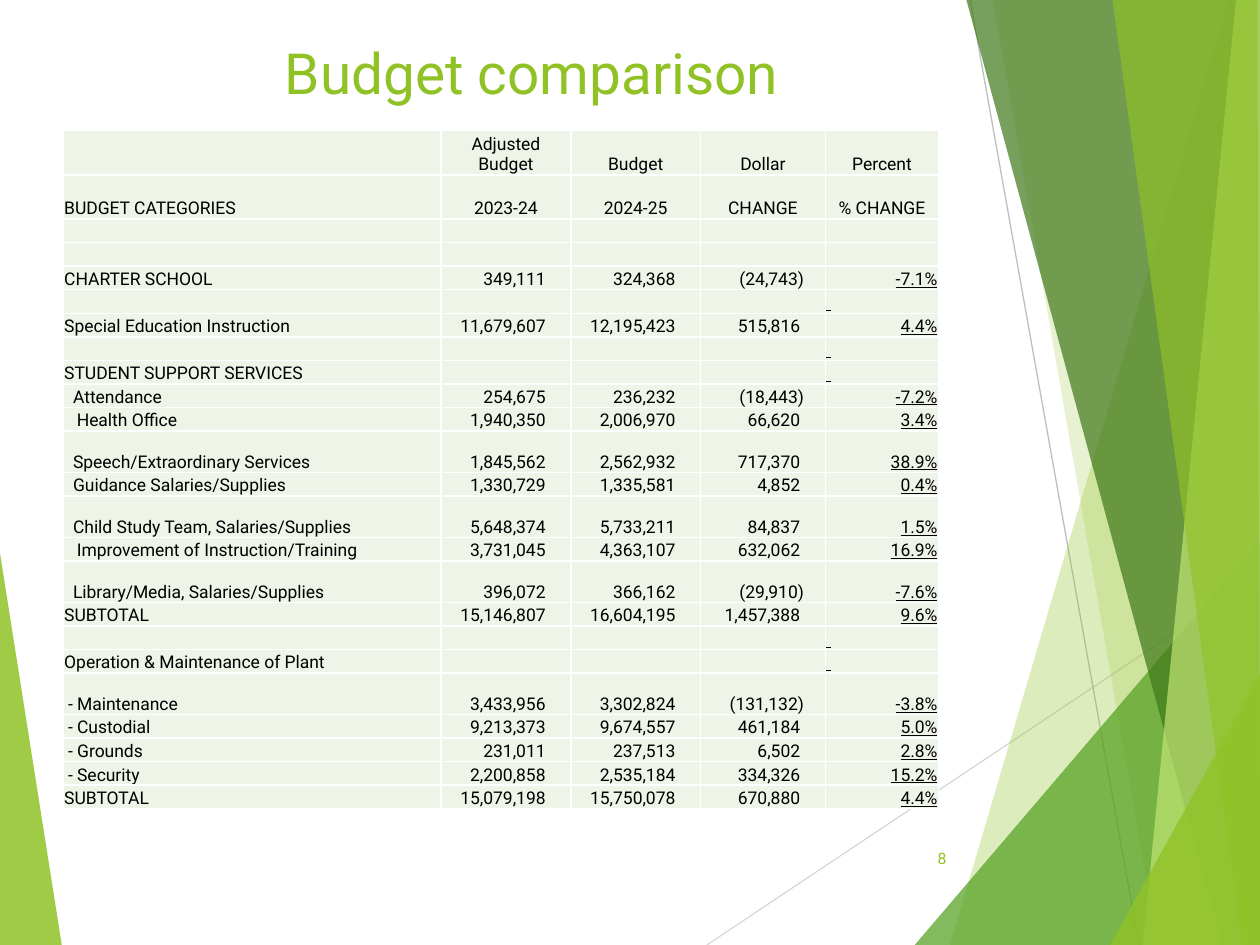
import pptx
import pptx.util
import pptx.dml.color
import pptx.enum.text
import pptx.enum.shapes
import pptx.oxml
import pptx.oxml.ns
import lxml.etree

RGB = pptx.dml.color.RGBColor
INCH = pptx.util.Inches
PT = pptx.util.Pt
ALIGN = pptx.enum.text.PP_ALIGN
ANCHOR = pptx.enum.text.MSO_ANCHOR
QN = pptx.oxml.ns.qn

LIME = RGB(0x90, 0xC2, 0x26)
GREEN = RGB(0x54, 0xA0, 0x21)
DARK = RGB(0x3F, 0x78, 0x19)
PALE = RGB(0xC0, 0xE4, 0x74)
MINT = RGB(0xEE, 0xF4, 0xE8)
BLACK = RGB(0, 0, 0)
LIGHT = RGB(0xD9, 0xD9, 0xD9)
GRAY = RGB(0xBF, 0xBF, 0xBF)
FONT = "Roboto"
WIDE, HIGH = 10, 7.5

# Background: straight lines (from, to, colour) and shards (colour, opacity, corners)
LINES = [
    ((5.61, HIGH), (WIDE, 4.57), LIGHT),
    ((7.7, 0), (9.04, HIGH), GRAY),
]
LEFT = (LIME, 85, [(0, 4.39), (0.49, HIGH), (0, HIGH)])
SHARDS = [
    (LIME, 30, [(9.75, 0), (7.54, HIGH), (WIDE, HIGH), (WIDE, 0)]),
    (LIME, 20, [(7.88, 0), (9.19, HIGH), (WIDE, HIGH), (WIDE, 0)]),
    (GREEN, 72, [(7.26, HIGH), (WIDE, 4.29), (WIDE, HIGH)]),
    (DARK, 70, [(7.67, 0), (9.7, HIGH), (WIDE, HIGH), (WIDE, 0)]),
    (PALE, 70, [(9.81, 0), (9.07, HIGH), (WIDE, HIGH), (WIDE, 0)]),
    (LIME, 65, [(8.83, 0), (9.86, HIGH), (WIDE, HIGH), (9.98, 0)]),
    (LIME, 80, [(8.81, HIGH), (WIDE, 5.35), (WIDE, HIGH)]),
]

# Table: label, two budgets, change, percent; a lone underlined space is a bare rule
HEADS = [
    ("", "Adjusted Budget", "Budget", "Dollar", "Percent"),
    ("BUDGET CATEGORIES", "2023-24", "2024-25", "CHANGE", "% CHANGE"),
]
BLANK = ("", None, None, None, "")
RULE = ("", None, None, None, " ")
ROWS = [
    BLANK,
    BLANK,
    ("CHARTER SCHOOL", 349111, 324368, -24743, "-7.1%"),
    RULE,
    ("Special Education Instruction", 11679607, 12195423, 515816, "4.4%"),
    RULE,
    ("STUDENT SUPPORT SERVICES", None, None, None, " "),
    ("Attendance", 254675, 236232, -18443, "-7.2%"),
    ("Health Office", 1940350, 2006970, 66620, "3.4%"),
    ("Speech/Extraordinary Services", 1845562, 2562932, 717370, "38.9%"),
    ("Guidance Salaries/Supplies", 1330729, 1335581, 4852, "0.4%"),
    ("Child Study Team, Salaries/Supplies", 5648374, 5733211, 84837, "1.5%"),
    ("Improvement of Instruction/Training", 3731045, 4363107, 632062, "16.9%"),
    ("Library/Media, Salaries/Supplies", 396072, 366162, -29910, "-7.6%"),
    ("SUBTOTAL", 15146807, 16604195, 1457388, "9.6%"),
    RULE,
    ("Operation & Maintenance of Plant", None, None, None, " "),
    ("- Maintenance", 3433956, 3302824, -131132, "-3.8%"),
    ("- Custodial", 9213373, 9674557, 461184, "5.0%"),
    ("- Grounds", 231011, 237513, 6502, "2.8%"),
    ("- Security", 2200858, 2535184, 334326, "15.2%"),
    ("SUBTOTAL", 15079198, 15750078, 670880, "4.4%"),
]
COLS = [3, 1.03, 1.03, 0.99, 0.9]
TALL = {0: 0.36, 1: 0.35, 11: 0.33, 13: 0.33, 15: 0.33, 19: 0.33}
DEEP = 5.39
SERVICES = range(9, 16)
FURTHER = (10, 14)  # services set in a little more than the rest


def write(frame, text, size=10, color=BLACK, align=ALIGN.LEFT, line=False):
    para = frame.paragraphs[0]
    para.alignment = align
    if not text:
        para._p.get_or_add_endParaRPr().set("sz", str(size * 100))
        return
    run = para.add_run()
    run.text = text
    run.font.name, run.font.size = FONT, PT(size)
    run.font.color.rgb, run.font.underline = color, line


def box(slide, text, place, anchor=ANCHOR.TOP, **form):
    frame = slide.shapes.add_textbox(*map(INCH, place)).text_frame
    frame.word_wrap = True
    frame.vertical_anchor = anchor
    write(frame, text, **form)


def shard(slide, color, alpha, spots):
    spots = [(INCH(x), INCH(y)) for x, y in spots]
    path = slide.shapes.build_freeform(*spots[0], scale=1.0)
    path.add_line_segments(spots[1:], close=True)
    shape = path.convert_to_shape()
    shape.shadow.inherit = False
    shape.fill.solid()
    shape.fill.fore_color.rgb = color
    shape.line.fill.background()
    tint = shape._element.spPr.find(QN("a:solidFill"))[0]
    lxml.etree.SubElement(tint, QN("a:alpha")).set("val", str(alpha * 1000))


def rule(slide, start, end, color):
    kind = pptx.enum.shapes.MSO_CONNECTOR.STRAIGHT
    line = slide.shapes.add_connector(kind, *map(INCH, start + end))
    line.line.color.rgb, line.line.width = color, PT(0.75)
    lxml.etree.SubElement(line._element.spPr, QN("a:effectLst"))


def edge(cell):
    props = cell._tc.get_or_add_tcPr()
    space = pptx.oxml.ns.nsdecls("a")
    for spot, side in enumerate(("lnL", "lnR", "lnT", "lnB")):
        props.insert(spot, pptx.oxml.parse_xml(
            f'<a:{side} {space} w="12700"><a:solidFill>'
            f'<a:srgbClr val="FFFFFF"/></a:solidFill></a:{side}>'))


def money(value):
    if value is None:
        return ""
    return f"({-value:,})" if value < 0 else f"{value:,}"


def indent(row, label):
    if label.startswith("-"):
        return 0.04
    if row in SERVICES:
        return 0.11 if row in FURTHER else 0.08
    return 0.01


def fill(cell, row, col, value):
    cell.fill.solid()
    cell.fill.fore_color.rgb = MINT
    cell.vertical_anchor = ANCHOR.BOTTOM
    left, right, align, line = 0.01, 0.01, ALIGN.LEFT, False
    if col == 0:
        left = indent(row, value)
    elif row < len(HEADS):
        align = ALIGN.CENTER
    elif col == 4:
        line = True
        align = ALIGN.RIGHT if value.strip() else ALIGN.LEFT
    else:
        align = ALIGN.RIGHT
        right = 0.17 if value and value < 0 else 0.2
        value = money(value)
    cell.margin_left, cell.margin_right = INCH(left), INCH(right)
    cell.margin_top, cell.margin_bottom = INCH(0.01), 0
    write(cell.text_frame, value, align=align, line=line)
    edge(cell)


def grid(slide):
    data = HEADS + ROWS
    area = map(INCH, (0.5, 1.03, sum(COLS), DEEP))
    table = slide.shapes.add_table(len(data), len(COLS), *area).table
    table.first_row = table.horz_banding = False
    for col, width in zip(table.columns, COLS):
        col.width = INCH(width)
    short = (DEEP - sum(TALL.values())) / (len(data) - len(TALL))
    for r, line in enumerate(data):
        table.rows[r].height = INCH(TALL.get(r, short))
        for c, value in enumerate(line):
            fill(table.cell(r, c), r, c, value)


def main():
    deck = pptx.Presentation()
    deck.slide_width, deck.slide_height = INCH(WIDE), INCH(HIGH)
    slide = deck.slides.add_slide(deck.slide_layouts[6])
    # Background
    shard(slide, *LEFT)
    for line in LINES:
        rule(slide, *line)
    for part in SHARDS:
        shard(slide, *part)
    # Title, page number and table
    box(slide, "Budget comparison", (0.75, 0.25, 6.94, 0.67),
        size=32.4, color=LIME, align=ALIGN.CENTER)
    box(slide, "8", (7.05, 6.61, 0.56, 0.4), anchor=ANCHOR.MIDDLE,
        size=9, color=LIME, align=ALIGN.RIGHT)
    grid(slide)
    deck.save("out.pptx")


if __name__ == "__main__":
    main()
